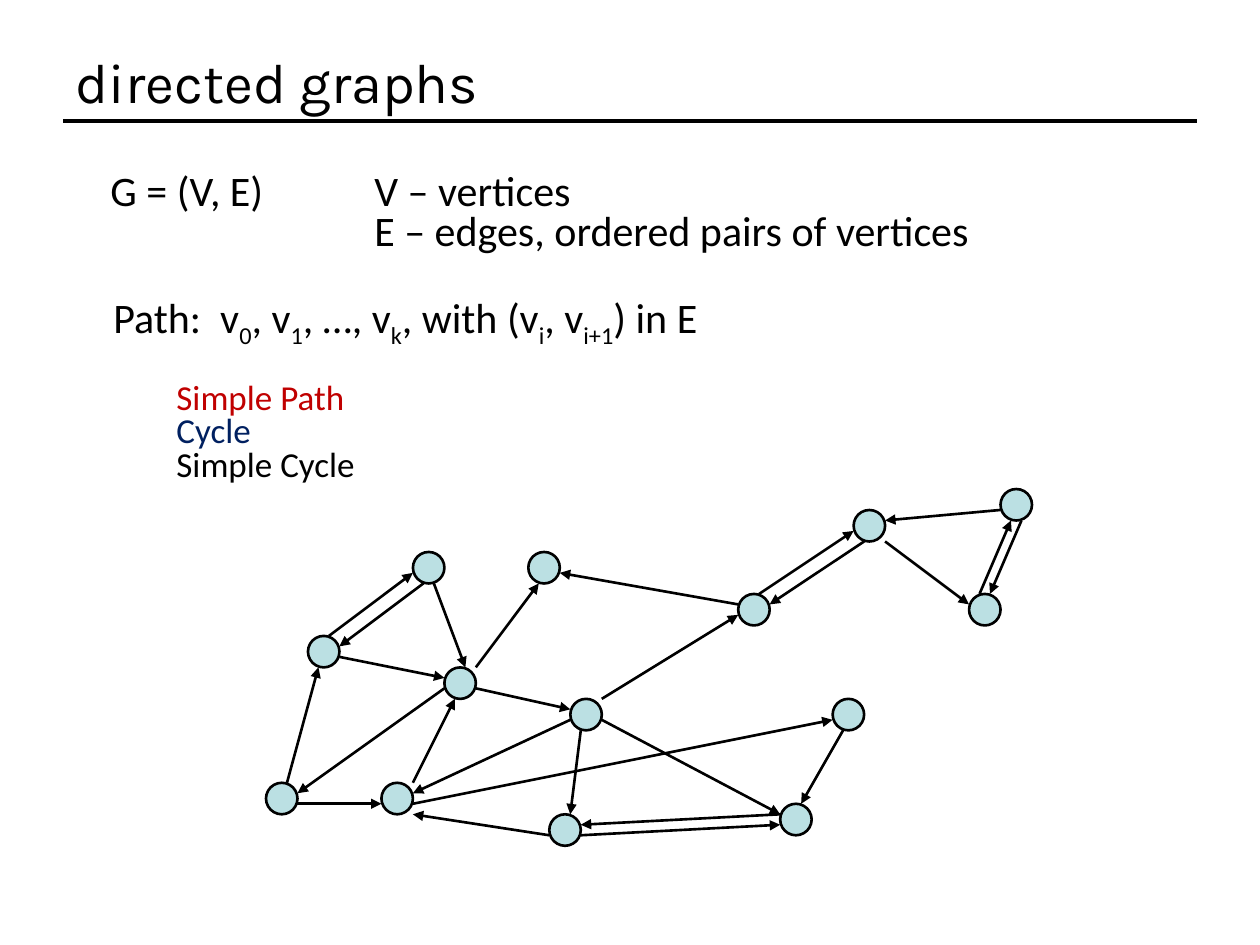
from dataclasses import dataclass

from lxml import etree
from pptx import Presentation
from pptx.dml.color import RGBColor
from pptx.enum.shapes import MSO_CONNECTOR, MSO_SHAPE
from pptx.enum.text import MSO_ANCHOR, PP_ALIGN
from pptx.oxml.ns import qn
from pptx.util import Emu, Pt

LINE, OVAL = MSO_CONNECTOR.STRAIGHT, MSO_SHAPE.OVAL
LEFT, LOW = PP_ALIGN.LEFT, MSO_ANCHOR.BOTTOM
PX = 914400 / 126  # EMU in one px


@dataclass(frozen=True)
class Theme:
    ink: RGBColor = RGBColor(0, 0, 0)
    red: RGBColor = RGBColor(0xC0, 0, 0)
    navy: RGBColor = RGBColor(0, 0x20, 0x60)
    node: RGBColor = RGBColor(0xBB, 0xE0, 0xE3)
    head: str = "Karla"
    body: str = "Calibri"
    big: int = 32
    mid: int = 24
    small: int = 20
    rule: float = 2
    edge: float = 1.5


T = Theme()

SPAN = 73   # graph width in cells
NODE = 3    # node width in cells

# Top left cell of each node
NODES = {
    "A": (4, 14), "B": (29, 20), "C": (0, 28), "D": (45, 10), "E": (17, 17),
    "F": (11, 28), "G": (27, 31), "H": (25, 6), "I": (56, 2), "J": (54, 20),
    "K": (14, 6), "L": (49, 30), "M": (70, 0), "N": (67, 10),
}

# From node and to node, then the cell offset of each end within its node
EDGES = [
    ("EC", (0, 2), (3, 1)), ("FE", (3, 0), (1, 3)), ("CF", (3, 2), (0, 2)),
    ("CA", (2, 0), (1, 3)), ("AK", (2, 0), (0, 2)), ("KA", (1, 3), (3, 1)),
    ("AE", (3, 2), (0, 1)), ("KE", (2, 3), (2, 0)), ("EH", (3, 0), (1, 3)),
    ("EB", (3, 2), (0, 1)), ("BF", (0, 2), (3, 1)), ("FJ", (3, 2), (0, 2)),
    ("GF", (0, 2), (3, 3)), ("BG", (1, 3), (2, 0)), ("LG", (0, 1), (3, 1)),
    ("GL", (3, 2), (0, 2)), ("JL", (1, 3), (2, 0)), ("BL", (3, 2), (0, 1)),
    ("BD", (3, 0), (0, 2)), ("DH", (0, 1), (3, 2)), ("ID", (1, 3), (3, 1)),
    ("DI", (2, 0), (0, 2)), ("IN", (3, 3), (0, 1)), ("MI", (0, 2), (3, 1)),
    ("MN", (2, 3), (2, 0)), ("NM", (1, 0), (1, 3)),
]


def emu(*vals):
    return [Emu(round(v * PX)) for v in vals]


def draw_line(slide, start, end, width, arrow=False):
    line = slide.shapes.add_connector(LINE, *emu(*start, *end))
    line.line.color.rgb = T.ink
    line.line.width = Pt(width)
    if arrow:
        tail = etree.SubElement(line.line._get_or_add_ln(), qn("a:tailEnd"))
        tail.set("type", "triangle")
    etree.SubElement(line._element.spPr, qn("a:effectLst"))


def add_title(slide, box, text):
    title = slide.shapes.title
    title.left, title.top, title.width, title.height = emu(*box)
    frame = title.text_frame
    frame.text = text
    frame.vertical_anchor = LOW
    para = frame.paragraphs[0]
    para.alignment = LEFT
    font = para.font
    font.name, font.size, font.color.rgb = T.head, Pt(T.big), T.ink
    x, y, w, h = box
    draw_line(slide, (x, y + h), (x + w, y + h), T.rule)


def add_text(slide, box, rows):
    """Rows hold text, size, colour, indent and space before in pt.

    Every second part between bars is a subscript.
    """
    frame = slide.shapes.add_textbox(*emu(*box)).text_frame
    frame.word_wrap = True
    for n, (text, size, color, indent, gap) in enumerate(rows):
        para = frame.add_paragraph() if n else frame.paragraphs[0]
        para.line_spacing = 0.8
        para.space_before = Pt(gap)
        para._p.get_or_add_pPr().set("marL", str(emu(indent)[0]))
        font = para.font
        font.name, font.size, font.color.rgb = T.body, Pt(size), color
        for k, part in enumerate(text.split("|")):
            run = para.add_run()
            run.text = part
            if k % 2:
                run._r.get_or_add_rPr().set("baseline", "-25000")


def add_graph(slide, box):
    left, top, width = box
    cell = width / SPAN

    def spot(name, off=(0, 0)):
        x, y = NODES[name]
        return left + (x + off[0]) * cell, top + (y + off[1]) * cell

    for name in NODES:
        dot = slide.shapes.add_shape(
            OVAL, *emu(*spot(name), NODE * cell, NODE * cell))
        dot.shadow.inherit = False
        dot.fill.solid()
        dot.fill.fore_color.rgb = T.node
        dot.line.color.rgb = T.ink
        dot.line.width = Pt(T.edge)
    for (src, dest), out, into in EDGES:
        draw_line(slide, spot(src, out), spot(dest, into), T.edge, True)


def main():
    deck = Presentation()
    deck.slide_width, deck.slide_height = emu(1260, 945)
    slide = deck.slides.add_slide(deck.slide_layouts[5])
    add_title(slide, (63, 38, 1134, 83), "directed graphs")
    add_graph(slide, (266, 489, 766))
    add_text(slide, (101, 291, 861, 197), [
        ("Path:  v|0|, v|1|, …, v|k|, with (v|i|, v|i+1|) in E",
         T.mid, T.ink, 0, 0),
        ("Simple Path", T.small, T.red, 63, 23),
        ("Cycle", T.small, T.navy, 63, 0),
        ("Simple Cycle", T.small, T.ink, 63, 0),
    ])
    add_text(slide, (98, 168, 840, 54), [("G = (V, E)", T.mid, T.ink, 0, 0)])
    add_text(slide, (299, 168, 759, 95), [
        ("V – vertices", T.mid, T.ink, 63, 0),
        ("E – edges, ordered pairs of vertices", T.mid, T.ink, 63, 0),
    ])
    deck.save("out.pptx")


if __name__ == "__main__":
    main()
